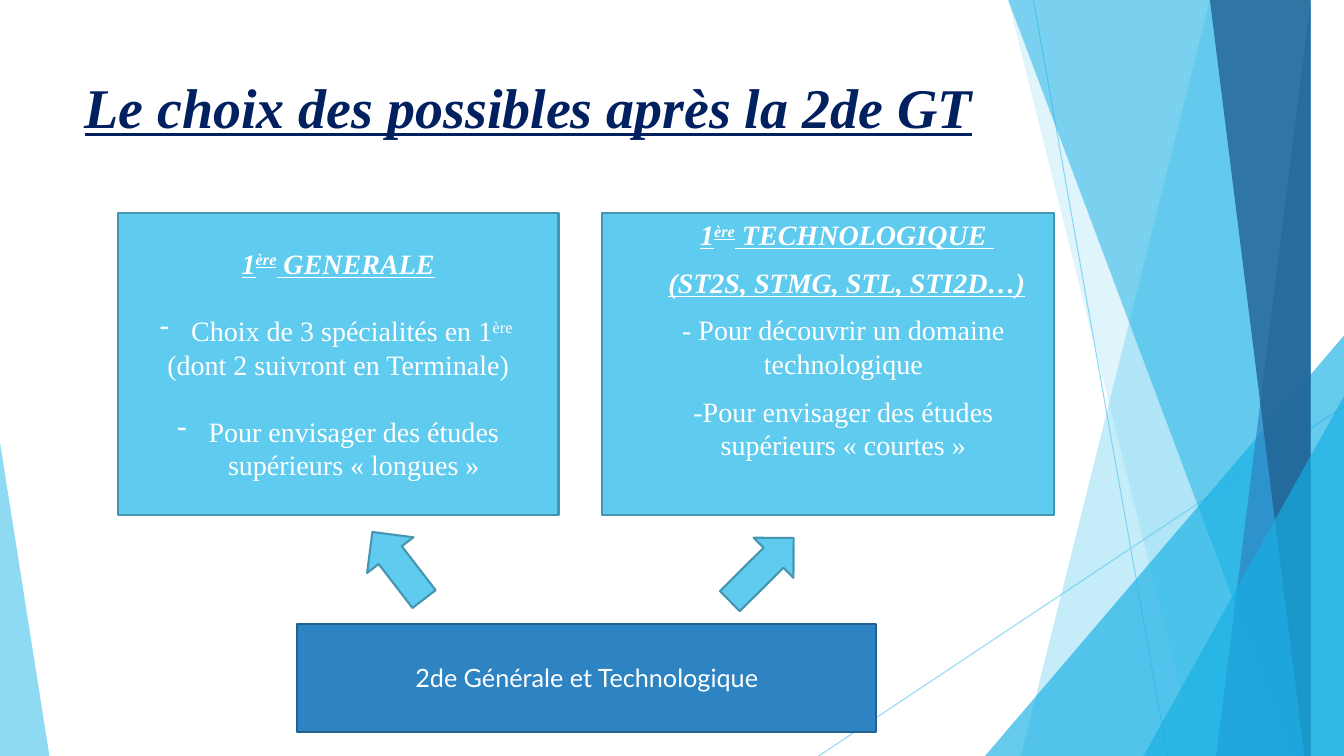
from dataclasses import dataclass

from lxml import etree
from pptx import Presentation
from pptx.dml.color import RGBColor
from pptx.enum.shapes import MSO_CONNECTOR, MSO_SHAPE
from pptx.enum.text import MSO_ANCHOR, PP_ALIGN
from pptx.oxml.ns import qn
from pptx.util import Inches, Pt

RECT = MSO_SHAPE.RECTANGLE
ARROW = MSO_SHAPE.RIGHT_ARROW
TRIANGLE = MSO_SHAPE.ISOSCELES_TRIANGLE
STRAIGHT = MSO_CONNECTOR.STRAIGHT
TOP, MIDDLE = MSO_ANCHOR.TOP, MSO_ANCHOR.MIDDLE
LEFT, CENTER = PP_ALIGN.LEFT, PP_ALIGN.CENTER


@dataclass(frozen=True)
class Theme:
    sky: str = "5FCBEF"
    cyan: str = "17B0E4"
    blue: str = "2E83C3"
    deep: str = "226292"
    sky_edge: str = "4696B1"
    blue_edge: str = "226190"
    navy: str = "002060"
    white: str = "FFFFFF"
    serif: str = "Times New Roman"
    sans: str = "Lato"
    title_size: float = 40
    body_size: float = 20
    base_size: float = 18
    outline: float = 1.5
    hairline: float = 0.75


T = Theme()


@dataclass(frozen=True)
class Box:
    x: float
    y: float
    w: float
    h: float


@dataclass(frozen=True)
class Band:
    top_left: float
    top_right: float
    bottom_right: float
    bottom_left: float
    color: str
    opacity: int


@dataclass(frozen=True)
class Facet:
    box: Box
    apex: float
    color: str
    opacity: int


@dataclass(frozen=True)
class Ray:
    x1: float
    y1: float
    x2: float
    y2: float


@dataclass(frozen=True)
class Style:
    font: str
    size: float
    color: str
    heading: bool = False


@dataclass(frozen=True)
class Run:
    text: str
    style: Style
    raised: bool = False


@dataclass(frozen=True)
class Para:
    runs: tuple[Run, ...]
    before: float = 0
    margin: float = 0
    bullet: str = ""
    align: PP_ALIGN = CENTER


@dataclass(frozen=True)
class Panel:
    box: Box
    fill: str
    edge: str
    paras: tuple[Para, ...]
    anchor: MSO_ANCHOR = MIDDLE


@dataclass(frozen=True)
class Arrow:
    box: Box
    rotation: float


TITLE = Style(T.serif, T.title_size, T.navy, True)
HEAD = Style(T.serif, T.body_size, T.white, True)
BODY = Style(T.serif, T.body_size, T.white)
BASE = Style(T.sans, T.base_size, T.white)

RAYS = (Ray(10.25, 0, 11.58, 7.5), Ray(13.33, 4.03, 8.12, 7.5))
DECOR = (
    Band(12.28, 13.33, 13.33, 10.04, T.sky, 36),
    Band(10.5, 13.33, 13.33, 11.83, T.sky, 20),
    Facet(Box(9.77, 3.33, 3.56, 4.17), 1, T.cyan, 66),
    Band(10.21, 13.33, 13.33, 12.91, T.cyan, 50),
    Band(13.03, 13.33, 13.33, 11.92, T.blue, 70),
    Band(11.96, 13.33, 13.33, 13.18, T.deep, 80),
    Facet(Box(11.34, 3.93, 1.99, 3.57), 1, T.cyan, 66),
    Facet(Box(0, 4.39, 0.49, 3.11), 0, T.sky, 70),
)
TITLE_BOX = Box(0.74, 0.67, 9.4, 1.44)
TITLE_PARA = Para((Run("Le choix des possibles après la 2de GT", TITLE),), align=LEFT)
PANELS = (
    Panel(Box(2.95, 6.19, 5.74, 1.07), T.blue, T.blue_edge,
          (Para((Run("2de Générale et Technologique", BASE),)),)),
    Panel(Box(1.17, 2.11, 4.37, 3), T.sky, T.sky_edge, (
        Para((Run("1", HEAD), Run("ère", HEAD, True), Run(" GENERALE", HEAD))),
        Para((Run("Choix de 3 spécialités en 1", BODY), Run("ère ", BODY, True)),
             before=24, margin=0.31, bullet="-"),
        Para((Run("(dont 2 suivront en Terminale)", BODY),)),
        Para((Run("Pour envisager des études supérieurs « longues »", BODY),),
             before=24, margin=0.31, bullet="-"),
    )),
    Panel(Box(5.97, 2.11, 4.48, 3), T.sky, T.sky_edge, (
        Para((Run("1", HEAD), Run("ère", HEAD, True), Run(" TECHNOLOGIQUE ", HEAD)),
             before=10, margin=0.38),
        Para((Run("(ST2S, STMG, STL, STI2D…)", HEAD),), before=10, margin=0.38),
        Para((Run("- Pour découvrir un domaine technologique", BODY),),
             before=10, margin=0.31),
        Para((Run("-Pour envisager des études supérieurs « courtes »", BODY),),
             before=10, margin=0.31),
    ), TOP),
)
ARROWS = (Arrow(Box(7.11, 5.37, 0.89, 0.56), 315.2),
          Arrow(Box(3.53, 5.32, 0.84, 0.58), 232.4))


def rgb(color: str) -> RGBColor:
    return RGBColor.from_string(color)


def frame(box: Box) -> tuple:
    return Inches(box.x), Inches(box.y), Inches(box.w), Inches(box.h)


def set_opacity(element, percent: int) -> None:
    color = next(element.iter(qn("a:srgbClr")))
    etree.SubElement(color, qn("a:alpha")).set("val", str(percent * 1000))


def paint(sp, fill: str, edge: str = "", opacity: int = 100) -> None:
    sp.shadow.inherit = False
    sp.fill.solid()
    sp.fill.fore_color.rgb = rgb(fill)
    if opacity < 100:
        set_opacity(sp._element.spPr, opacity)
    if edge:
        sp.line.color.rgb = rgb(edge)
        sp.line.width = Pt(T.outline)
    else:
        sp.line.fill.background()


def draw_ray(s, ray: Ray) -> None:
    line = s.shapes.add_connector(STRAIGHT, Inches(ray.x1), Inches(ray.y1),
                                  Inches(ray.x2), Inches(ray.y2))
    line.line.color.rgb = rgb(T.sky)
    line.line.width = Pt(T.hairline)
    set_opacity(line._element.spPr, 70)
    etree.SubElement(line._element.spPr, qn("a:effectLst"))


def draw_decor(s, item: Band | Facet) -> None:
    if isinstance(item, Facet):
        sp = s.shapes.add_shape(TRIANGLE, *frame(item.box))
        sp.adjustments[0] = item.apex
    else:
        builder = s.shapes.build_freeform(item.top_left, -0.01, scale=Inches(1))
        builder.add_line_segments([(item.top_right, -0.01), (item.bottom_right, 7.5),
                                   (item.bottom_left, 7.5)], close=True)
        sp = builder.convert_to_shape()
    paint(sp, item.color, opacity=item.opacity)


def write(tf, paras: tuple[Para, ...], anchor: MSO_ANCHOR) -> None:
    tf.word_wrap = True
    tf.vertical_anchor = anchor
    for i, para in enumerate(paras):
        p = tf.add_paragraph() if i else tf.paragraphs[0]
        p.alignment = para.align
        p.space_before = Pt(para.before)
        pPr = p._p.get_or_add_pPr()
        pPr.set("marL", str(Inches(para.margin)))
        if para.bullet:
            pPr.set("indent", str(-Inches(para.margin)))
            etree.SubElement(pPr, qn("a:buChar")).set("char", para.bullet)
        for run in para.runs:
            r = p.add_run()
            r.text = run.text
            font, style = r.font, run.style
            font.name, font.size = style.font, Pt(style.size)
            font.color.rgb = rgb(style.color)
            font.bold = font.italic = font.underline = style.heading
            if run.raised:
                r._r.get_or_add_rPr().set("baseline", "30000")


def draw_panel(s, panel: Panel) -> None:
    sp = s.shapes.add_shape(RECT, *frame(panel.box))
    paint(sp, panel.fill, panel.edge)
    write(sp.text_frame, panel.paras, panel.anchor)


def draw_arrow(s, arrow: Arrow) -> None:
    sp = s.shapes.add_shape(ARROW, *frame(arrow.box))
    sp.rotation = arrow.rotation
    paint(sp, T.sky, T.sky_edge)


def main() -> None:
    prs = Presentation()
    prs.slide_width, prs.slide_height = Inches(13.33), Inches(7.5)
    s = prs.slides.add_slide(prs.slide_layouts[6])
    for ray in RAYS:
        draw_ray(s, ray)
    for item in DECOR:
        draw_decor(s, item)
    write(s.shapes.add_textbox(*frame(TITLE_BOX)).text_frame, (TITLE_PARA,), TOP)
    for panel in PANELS:
        draw_panel(s, panel)
    for arrow in ARROWS:
        draw_arrow(s, arrow)
    prs.save("out.pptx")


if __name__ == "__main__":
    main()
